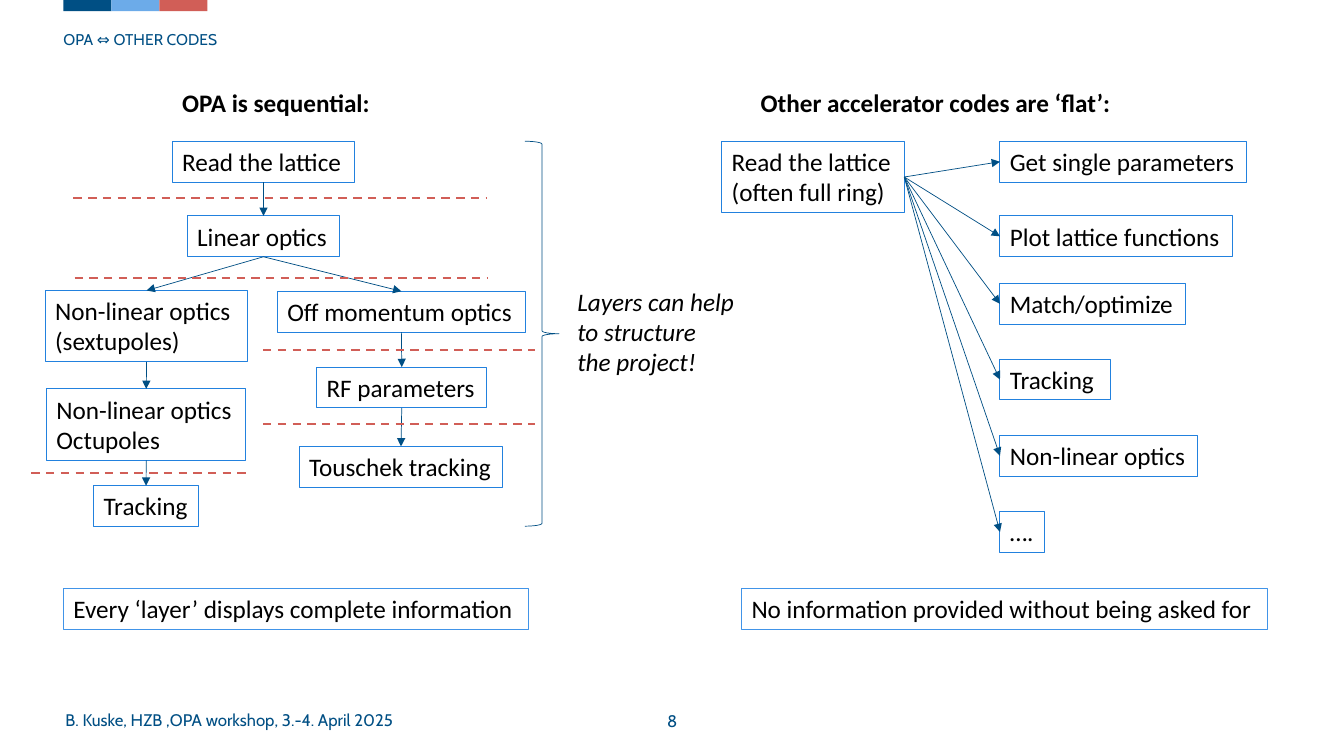
from lxml.etree import SubElement
from pptx import Presentation
from pptx.dml.color import RGBColor
from pptx.enum.dml import MSO_LINE
from pptx.enum.shapes import MSO_CONNECTOR, MSO_SHAPE
from pptx.enum.text import MSO_ANCHOR, PP_ALIGN
from pptx.oxml.ns import qn
from pptx.util import Cm, Pt

NAVY = RGBColor(0x00, 0x4F, 0x84)
SKY = RGBColor(0x6C, 0xAB, 0xE9)
RED = RGBColor(0xD1, 0x5E, 0x57)
FRAME_BLUE = RGBColor(0x22, 0x81, 0xDE)
SUMMARY_BLUE = RGBColor(0x41, 0x94, 0xE8)
BLACK = RGBColor(0, 0, 0)

TOP, BOTTOM, LEFT, RIGHT = 0, 2, 1, 3
LINE_HEIGHT = 0.77
PADDING = 0.26


def write(shape, text, size=18, font="Calibri", color=BLACK, bold=False,
          italic=False, wrap=True, align=PP_ALIGN.LEFT):
    frame = shape.text_frame
    frame.text = text
    frame.word_wrap = wrap
    frame.vertical_anchor = MSO_ANCHOR.TOP
    for para in frame.paragraphs:
        para.alignment = align
        for span in para.runs:
            span.font.size = Pt(size)
            span.font.name = font
            span.font.color.rgb = color
            span.font.bold = bold
            span.font.italic = italic
    return frame


def add_text(page, text, left, top, width, height, **style):
    box = page.shapes.add_textbox(Cm(left), Cm(top), Cm(width), Cm(height))
    return write(box, text, **style)


def add_outline(page, preset, left, top, width, height, color, weight):
    shape = page.shapes.add_shape(preset, Cm(left), Cm(top), Cm(width), Cm(height))
    shape.shadow.inherit = False
    shape.fill.background()
    shape.line.color.rgb = color
    shape.line.width = Pt(weight)
    return shape


def add_step(page, text, left, top, width, color=FRAME_BLUE):
    height = PADDING + LINE_HEIGHT * len(text.split("\n"))
    box = add_outline(page, MSO_SHAPE.RECTANGLE, left, top, width, height, color, 0.75)
    write(box, text, wrap=False)
    return box


def add_line(page, start, end, color, weight):
    ends = [Cm(value) for value in (*start, *end)]
    line = page.shapes.add_connector(MSO_CONNECTOR.STRAIGHT, *ends)
    line.line.color.rgb = color
    line.line.width = Pt(weight)
    SubElement(line._element.spPr, qn("a:effectLst"))
    return line


def add_arrow(page, source, target, source_side=BOTTOM, target_side=TOP):
    arrow = add_line(page, (0, 0), (0, 0), NAVY, 0.5)
    arrow.begin_connect(source, source_side)
    arrow.end_connect(target, target_side)
    SubElement(arrow.line._get_or_add_ln(), qn("a:tailEnd"), type="triangle")


def add_layer_border(page, left, right, top):
    line = add_line(page, (left, top), (right, top), RED, 1.5)
    line.line.dash_style = MSO_LINE.DASH


def add_page_frame(page):
    for index, color in enumerate((NAVY, SKY, RED)):
        band = page.shapes.add_shape(
            MSO_SHAPE.RECTANGLE, Cm(1.6 + 1.21 * index), 0, Cm(1.21), Cm(0.28))
        band.shadow.inherit = False
        band.fill.solid()
        band.fill.fore_color.rgb = color
        band.line.fill.background()
    label = {"font": "Cabin", "color": NAVY}
    title = add_text(page, "OPA ⇔ OTHER CODES", 1.6, 0.81, 3.89, 0.64,
                     size=11.1, wrap=False, **label)
    title.margin_left = title.margin_right = title.margin_top = title.margin_bottom = 0
    title.paragraphs[0].line_spacing = 0.9
    add_text(page, "B. Kuske, HZB ,OPA workshop, 3.-4. April 2025",
             1.4, 17.75, 14.91, 1.02, size=12, **label)
    number = add_text(page, "8", 15.77, 17.65, 2.34, 1.02,
                      size=12, align=PP_ALIGN.CENTER, **label)
    number.vertical_anchor = MSO_ANCHOR.MIDDLE


def add_sequential_side(page):
    add_text(page, "OPA is sequential:", 4.34, 2.08, 5.92, 1.03, bold=True)
    lattice = add_step(page, "Read the lattice", 4.34, 3.56, 4.6)
    linear = add_step(page, "Linear optics", 4.72, 5.44, 3.84)
    sextupoles = add_step(page, "Non-linear optics\n(sextupoles)", 1.14, 7.32, 5.11)
    momentum = add_step(page, "Off momentum optics", 6.99, 7.34, 6.25)
    octupoles = add_step(page, "Non-linear optics\nOctupoles", 1.17, 9.8, 5.03)
    tracking = add_step(page, "Tracking", 2.36, 12.24, 2.64)
    cavity = add_step(page, "RF parameters", 7.98, 9.25, 4.29)
    touschek = add_step(page, "Touschek tracking", 7.54, 11.25, 5.13)
    for source, target in (
            (lattice, linear), (linear, sextupoles), (linear, momentum),
            (sextupoles, octupoles), (octupoles, tracking),
            (momentum, cavity), (cavity, touschek)):
        add_arrow(page, source, target)
    for left, right, top in (
            (1.85, 12.24, 5), (1.88, 12.29, 7.01), (6.63, 13.49, 8.81),
            (6.63, 13.49, 10.69), (0.79, 6.27, 11.91)):
        add_layer_border(page, left, right, top)
    add_outline(page, MSO_SHAPE.RIGHT_BRACE, 13.23, 3.56, 0.86, 9.7, NAVY, 0.5)
    add_text(page, "Layers can help\nto structure\nthe project!",
             14.3, 7.09, 4.55, 2.57, italic=True)
    add_step(page, "Every ‘layer’ displays complete information",
             1.6, 14.83, 11.71, SUMMARY_BLUE)


def add_flat_side(page):
    add_text(page, "Other accelerator codes are ‘flat’:", 18.92, 2.08, 9.4, 1.03, bold=True)
    lattice = add_step(page, "Read the lattice\n(often full ring)", 18.19, 3.56, 4.6)
    for text, top, width in (
            ("Get single parameters", 3.56, 6.22),
            ("Plot lattice functions", 5.44, 5.87),
            ("Match/optimize", 7.14, 4.67),
            ("Tracking", 9.05, 2.79),
            ("Non-linear optics", 10.97, 4.98),
            ("….", 12.89, 1.12)):
        task = add_step(page, text, 25.2, top, width)
        add_arrow(page, lattice, task, RIGHT, LEFT)
    add_step(page, "No information provided without being asked for",
             18.69, 14.83, 13.26, SUMMARY_BLUE)


def main():
    deck = Presentation()
    deck.slide_width = Cm(33.87)
    deck.slide_height = Cm(19.05)
    page = deck.slides.add_slide(deck.slide_layouts[6])
    add_page_frame(page)
    add_sequential_side(page)
    add_flat_side(page)
    deck.save("out.pptx")


if __name__ == "__main__":
    main()
